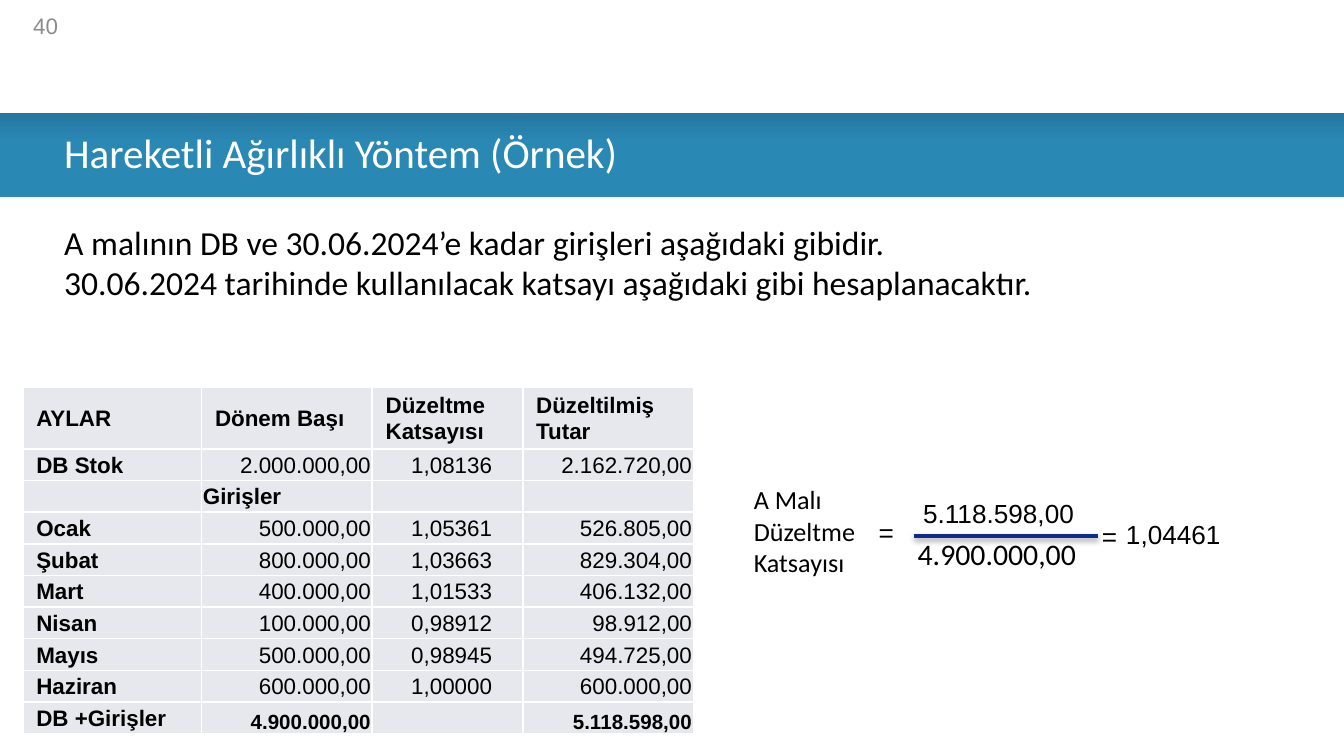
from lxml.etree import SubElement
from pptx import Presentation
from pptx.dml.color import RGBColor
from pptx.enum.shapes import MSO_CONNECTOR, MSO_SHAPE
from pptx.enum.text import MSO_ANCHOR, PP_ALIGN
from pptx.oxml.ns import qn
from pptx.util import Inches, Pt

WHITE = RGBColor(0xFF, 0xFF, 0xFF)
BLACK = RGBColor(0x00, 0x00, 0x00)
GRAY = RGBColor(0x8C, 0x8C, 0x8C)
BAND_DARK = RGBColor(0x24, 0x77, 0x9F)
BAND_BLUE = RGBColor(0x2A, 0x88, 0xB4)
CELL_FILL = RGBColor(0xE7, 0xE8, 0xEE)
BAR_BLUE = RGBColor(0x0E, 0x2B, 0x8D)

HEADERS = ["AYLAR", "Dönem Başı", "Düzeltme Katsayısı", "Düzeltilmiş Tutar"]
ROWS = [
    ["DB Stok", "2.000.000,00", "1,08136", "2.162.720,00"],
    ["", "Girişler", "", ""],
    ["Ocak", "500.000,00", "1,05361", "526.805,00"],
    ["Şubat", "800.000,00", "1,03663", "829.304,00"],
    ["Mart", "400.000,00", "1,01533", "406.132,00"],
    ["Nisan", "100.000,00", "0,98912", "98.912,00"],
    ["Mayıs", "500.000,00", "0,98945", "494.725,00"],
    ["Haziran", "600.000,00", "1,00000", "600.000,00"],
    ["DB +Girişler", "4.900.000,00", "", "5.118.598,00"],
]


def write(tf, text, size=14, font="Arial", color=BLACK, bold=False, align=PP_ALIGN.LEFT):
    for i, line in enumerate(text.split("\n")):
        p = tf.paragraphs[0] if i == 0 else tf.add_paragraph()
        p.alignment = align
        r = p.add_run()
        r.text = line
        r.font.size = Pt(size)
        r.font.name = font
        r.font.bold = bold
        r.font.color.rgb = color


def add_text(slide, left, top, width, height, text, anchor=MSO_ANCHOR.TOP, **fmt):
    tb = slide.shapes.add_textbox(Inches(left), Inches(top), Inches(width), Inches(height))
    tf = tb.text_frame
    tf.word_wrap = True
    tf.vertical_anchor = anchor
    write(tf, text, **fmt)


def add_title_band(slide, left, top, width, height):
    sp = slide.shapes.add_shape(
        MSO_SHAPE.RECTANGLE, Inches(left), Inches(top), Inches(width), Inches(height))
    sp.shadow.inherit = False
    sp.line.fill.background()
    sp.fill.gradient()
    sp.fill.gradient_angle = 270
    for stop, position, color in zip(sp.fill.gradient_stops, (0, 0.34), (BAND_DARK, BAND_BLUE)):
        stop.position = position
        stop.color.rgb = color
    add_text(slide, left + 0.38, top + 0.03, width - 1, 0.53,
             "Hareketli Ağırlıklı Yöntem (Örnek)", MSO_ANCHOR.MIDDLE,
             size=22, font="Calibri", color=WHITE)


def style_cell(cell, left_margin):
    cell.margin_left = Inches(left_margin)
    cell.margin_top = cell.margin_right = Inches(0.01)
    cell.margin_bottom = 0
    cell.vertical_anchor = MSO_ANCHOR.MIDDLE
    tc_pr = cell._tc.get_or_add_tcPr()
    for side in ("a:lnL", "a:lnR", "a:lnT", "a:lnB"):
        ln = SubElement(tc_pr, qn(side), w=str(Pt(1)))
        SubElement(SubElement(ln, qn("a:solidFill")), qn("a:srgbClr"), val=str(WHITE))
    cell.fill.solid()
    cell.fill.fore_color.rgb = CELL_FILL


def add_month_table(slide, left, top, height):
    col_widths = [1.33, 1.27, 1.12, 1.27]
    header_height = 0.46
    table = slide.shapes.add_table(
        len(ROWS) + 1, len(col_widths), Inches(left), Inches(top),
        Inches(sum(col_widths)), Inches(height)).table
    for col, width in zip(table.columns, col_widths):
        col.width = Inches(width)
    for i, values in enumerate([HEADERS] + ROWS):
        row_height = (height - header_height) / len(ROWS) if i else header_height
        table.rows[i].height = Inches(row_height)
        total = i == len(ROWS)
        for j, text in enumerate(values):
            cell = table.cell(i, j)
            label = i == 0 or j == 0
            amount = not label and j != 2 and text != "Girişler"
            style_cell(cell, 0.1 if label else 0.29 if j == 2 else 0.01)
            if not text:
                SubElement(cell.text_frame.paragraphs[0]._p, qn("a:endParaRPr"), sz="1200")
                continue
            if total and amount:
                cell.vertical_anchor = MSO_ANCHOR.BOTTOM
            write(cell.text_frame, text, size=11 if total and amount else 12,
                  bold=label or total or text == "Girişler",
                  align=PP_ALIGN.RIGHT if amount else PP_ALIGN.LEFT)


def add_fraction_bar(slide, left, top, width):
    bar = slide.shapes.add_connector(
        MSO_CONNECTOR.STRAIGHT, Inches(left), Inches(top), Inches(left + width), Inches(top))
    bar.line.color.rgb = BAR_BLUE
    bar.line.width = Pt(2)
    effects = SubElement(bar._element.spPr, qn("a:effectLst"))
    shadow = SubElement(effects, qn("a:outerShdw"), blurRad=str(Pt(3.1)),
                        dist=str(Pt(1.6)), dir="5400000", rotWithShape="0")
    color = SubElement(shadow, qn("a:srgbClr"), val=str(BLACK))
    SubElement(color, qn("a:alpha"), val="38000")


def add_formula(slide, left, top):
    add_text(slide, left, top, 1.08, 0.81, "A Malı Düzeltme Katsayısı", font="Calibri")
    add_text(slide, left + 0.93, top + 0.24, 0.37, 0.34, "=")
    add_text(slide, left + 1.26, top + 0.1, 1.53, 0.34, "5.118.598,00")
    add_text(slide, left + 1.22, top + 0.39, 1.53, 0.4, "4.900.000,00", size=16, font="Calibri")
    add_fraction_bar(slide, left + 1.29, top + 0.44, 1.37)
    add_text(slide, left + 2.59, top + 0.27, 0.37, 0.34, "=")
    add_text(slide, left + 2.77, top + 0.26, 0.96, 0.34, "1,04461")


def main():
    prs = Presentation()
    prs.slide_width = Inches(10)
    prs.slide_height = prs.slide_width * 9 // 16
    slide = prs.slides.add_slide(prs.slide_layouts[6])
    add_title_band(slide, 0, 0.84, 10, 0.63)
    add_text(slide, 0.38, 1.6, 8.86, 0.71,
             "A malının DB ve 30.06.2024’e kadar girişleri aşağıdaki gibidir.\n"
             "30.06.2024 tarihinde kullanılacak katsayı aşağıdaki gibi hesaplanacaktır.",
             size=18, font="Calibri")
    add_month_table(slide, 0.17, 2.88, 2.58)
    add_formula(slide, 5.51, 3.55)
    add_text(slide, 0.04, 0.04, 0.49, 0.3, "40", MSO_ANCHOR.MIDDLE,
             size=12, color=GRAY, align=PP_ALIGN.RIGHT)
    prs.save("out.pptx")


if __name__ == "__main__":
    main()
